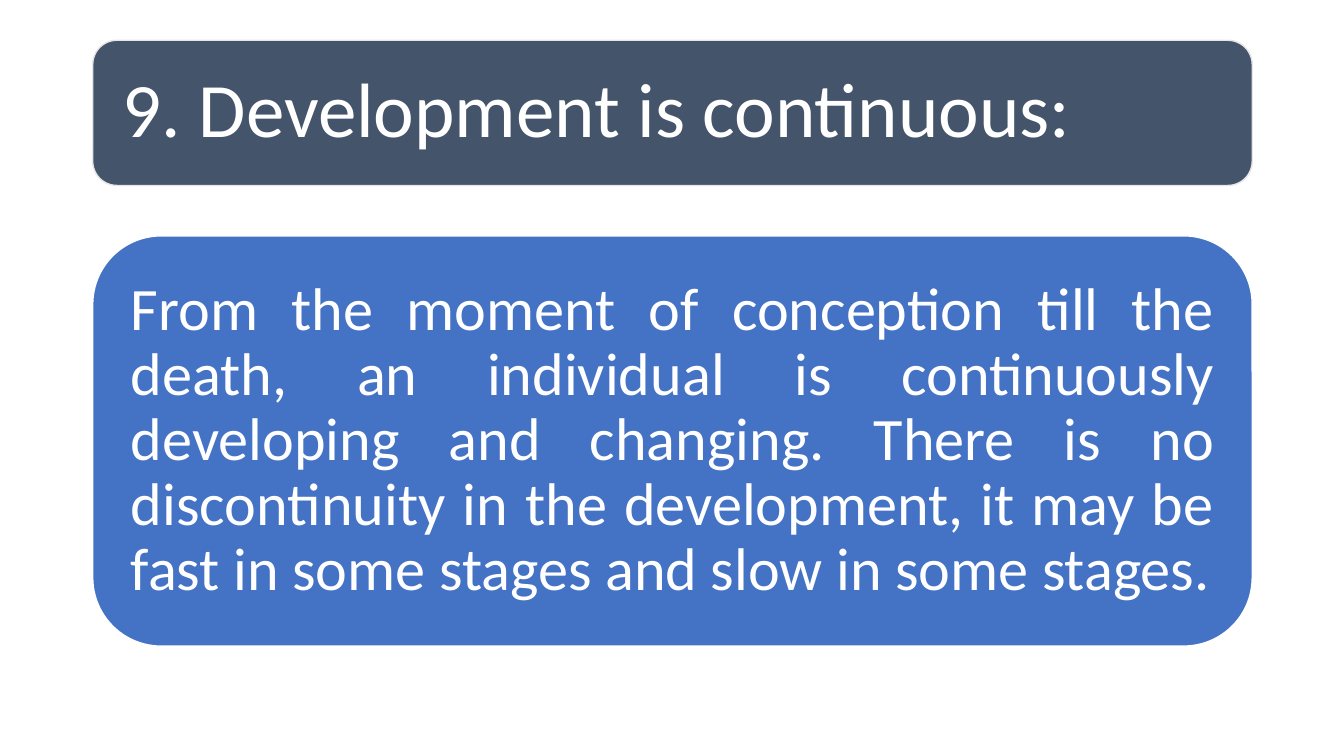
"""Build a slide with a heading panel and a body panel on continuous development."""
from pptx import Presentation
from pptx.dml.color import RGBColor
from pptx.enum.shapes import MSO_SHAPE
from pptx.enum.text import MSO_ANCHOR, PP_ALIGN
from pptx.util import Inches, Pt

COLORS = {
    "slate": "44546A",
    "blue": "4472C4",
    "pale_gray": "E7E6E6",
    "white": "FFFFFF",
}
HEADING = "9. Development is continuous:"
BODY = (
    "From the moment of conception till the death, an individual is continuously "
    "developing and changing. There is no discontinuity in the development, it may be "
    "fast in some stages and slow in some stages."
)
PANELS = [
    (HEADING, 0.4, 1.44, "slate", "pale_gray", 55, 0.23, PP_ALIGN.LEFT),
    (BODY, 2.34, 4.07, "blue", "white", 43, 0.18, PP_ALIGN.JUSTIFY),
]

presentation = Presentation()
presentation.slide_width = Inches(13.33)
presentation.slide_height = Inches(7.5)
slide = presentation.slides.add_slide(presentation.slide_layouts[6])

for text, top, height, fill, line, size, inset, alignment in PANELS:
    shape = slide.shapes.add_shape(
        MSO_SHAPE.ROUNDED_RECTANGLE, Inches(0.92), Inches(top), Inches(11.5), Inches(height)
    )
    shape.shadow.inherit = False
    shape.fill.solid()
    shape.fill.fore_color.rgb = RGBColor.from_string(COLORS[fill])
    shape.line.color.rgb = RGBColor.from_string(COLORS[line])
    shape.line.width = Pt(1)

    frame = shape.text_frame
    frame.word_wrap = True
    frame.vertical_anchor = MSO_ANCHOR.MIDDLE
    frame.margin_left = frame.margin_right = Inches(inset)
    frame.margin_top = frame.margin_bottom = Inches(inset)

    paragraph = frame.paragraphs[0]
    paragraph.text = text
    paragraph.alignment = alignment
    paragraph.line_spacing = 0.9
    paragraph.font.name = "Calibri"
    paragraph.font.size = Pt(size)
    paragraph.font.color.rgb = RGBColor.from_string(COLORS["white"])

presentation.save("out.pptx")
